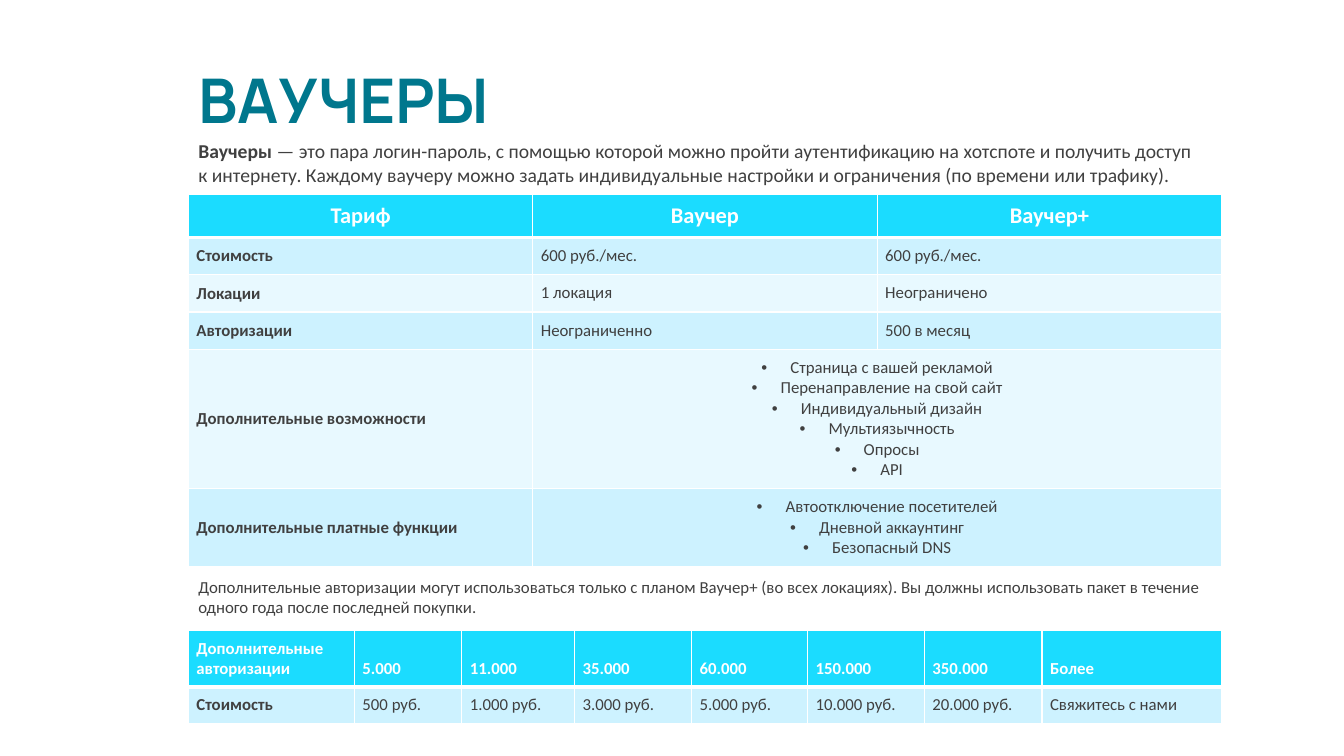
from lxml.etree import SubElement
from pptx import Presentation
from pptx.dml.color import RGBColor
from pptx.enum.text import MSO_ANCHOR, PP_ALIGN
from pptx.oxml.ns import qn
from pptx.util import Pt

COLORS = {
    "title": "00778D",
    "text": "404040",
    "header": "1BDCFF",
    "band_dark": "CDF2FF",
    "band_light": "E8F9FF",
    "white": "FFFFFF",
}
BODY_FONT = "Calibri"
CELL_INSET = 5.76
BULLET_INDENT = 18
LEFT, WIDTH = 134.6, 738

INTRO = [
    ("Ваучеры", True),
    (" — это пара логин-пароль, с помощью которой можно пройти аутентификацию "
     "на хотспоте и получить доступ к интернету. Каждому ваучеру можно задать "
     "индивидуальные настройки и ограничения (по времени или трафику).", False),
]
PACKAGE_NOTE = [
    ("Дополнительные авторизации могут использоваться только с планом Ваучер+ "
     "(во всех локациях). Вы должны использовать пакет в течение одного года "
     "после последней покупки.", False),
]
# A list in a cell becomes bullets spanning both plans
TARIFFS = [
    ["Тариф", "Ваучер", "Ваучер+"],
    ["Стоимость", "600 руб./мес.", "600 руб./мес."],
    ["Локации", "1 локация", "Неограничено"],
    ["Авторизации", "Неограниченно", "500 в месяц"],
    ["Дополнительные возможности",
     ["Страница с вашей рекламой", "Перенаправление на свой сайт",
      "Индивидуальный дизайн", "Мультиязычность", "Опросы", "API"]],
    ["Дополнительные платные функции",
     ["Автоотключение посетителей", "Дневной аккаунтинг", "Безопасный DNS"]],
]
TARIFF_HEIGHTS = [30.5, 26.6, 26.6, 26.6, 99.5, 56]
PACKAGES = [
    ["Дополнительные авторизации", "5.000", "11.000", "35.000", "60.000",
     "150.000", "350.000", "Более"],
    ["Стоимость", "500 руб.", "1.000 руб.", "3.000 руб.", "5.000 руб.",
     "10.000 руб.", "20.000 руб.", "Свяжитесь с нами"],
]
PACKAGE_WIDTHS = [118.6, 76.7, 80.6, 83.6, 82.8, 83.5, 84, 128.2]
PACKAGE_HEIGHTS = [40, 26.3]


def rgb(name):
    return RGBColor.from_string(COLORS[name])


def style(paragraph, size, color, bold=None, font=BODY_FONT):
    paragraph.font.name = font
    paragraph.font.size = Pt(size)
    paragraph.font.bold = bold
    paragraph.font.color.rgb = rgb(color)


def add_text(slide, box, runs, size, color="text", font=BODY_FONT,
             anchor=MSO_ANCHOR.TOP, line_spacing=None):
    frame = slide.shapes.add_textbox(*map(Pt, box)).text_frame
    frame.word_wrap = True
    frame.vertical_anchor = anchor
    paragraph = frame.paragraphs[0]
    paragraph.line_spacing = line_spacing
    for text, bold in runs:
        run = paragraph.add_run()
        run.text = text
        if len(runs) > 1:
            run.font.bold = bold
    style(paragraph, size, color, runs[0][1] if len(runs) == 1 else None, font)


def set_borders(cell, bottom):
    properties = cell._tc.get_or_add_tcPr()
    for position, (side, width) in enumerate(
            [("L", 1), ("R", 1), ("T", 1), ("B", bottom)]):
        line = SubElement(properties, qn(f"a:ln{side}"), w=str(Pt(width)))
        solid = SubElement(line, qn("a:solidFill"))
        SubElement(solid, qn("a:srgbClr"), val=COLORS["white"])
        properties.insert(position, line)


def add_bullet(paragraph):
    properties = paragraph._p.get_or_add_pPr()
    properties.set("marL", str(Pt(BULLET_INDENT)))
    properties.set("indent", str(-Pt(BULLET_INDENT)))
    SubElement(properties, qn("a:buFont"), typeface="Arial")
    SubElement(properties, qn("a:buChar"), char="•")


def fill_cell(cell, content, fill, color, size, bold, anchor, centered, bottom):
    cell.fill.solid()
    cell.fill.fore_color.rgb = rgb(fill)
    cell.margin_left = cell.margin_right = Pt(CELL_INSET)
    cell.margin_top = cell.margin_bottom = Pt(CELL_INSET)
    cell.vertical_anchor = anchor
    set_borders(cell, bottom)
    bulleted = isinstance(content, list)
    lines = [" " + item for item in content] if bulleted else [content]
    cell.text_frame.text = "\n".join(lines)
    for paragraph in cell.text_frame.paragraphs:
        if bulleted:
            add_bullet(paragraph)
        if bulleted or centered:
            paragraph.alignment = PP_ALIGN.CENTER
        style(paragraph, size, color, bold)


def add_grid(slide, left, top, widths, heights, rows, header_size,
             header_centered, label_anchor):
    table = slide.shapes.add_table(
        len(rows), len(widths), Pt(left), Pt(top),
        Pt(sum(widths)), Pt(sum(heights))).table
    for column, width in zip(table.columns, widths):
        column.width = Pt(width)
    for r, (row, height) in enumerate(zip(rows, heights)):
        table.rows[r].height = Pt(height)
        band = "band_dark" if r % 2 else "band_light"
        for c, content in enumerate(row):
            cell = table.cell(r, c)
            if isinstance(content, list):
                cell.merge(table.cell(r, len(widths) - 1))
            if r == 0:
                fill_cell(cell, content, "header", "white", header_size, True,
                          MSO_ANCHOR.BOTTOM, header_centered, 3)
            else:
                anchor = label_anchor if c == 0 else MSO_ANCHOR.TOP
                fill_cell(cell, content, band, "text", 12, c == 0,
                          anchor, False, 1)


def add_heading(slide, left, top, width):
    add_text(slide, (left, top, width, 58.3), [("ВАУЧЕРЫ", True)], 44, "title",
             "Manrope", MSO_ANCHOR.BOTTOM, 0.85)
    add_text(slide, (left, top + 53.3, width - 7, 58.3), INTRO, 14)


def add_tariffs(slide, left, top, width):
    add_grid(slide, left, top, [width / 3] * 3, TARIFF_HEIGHTS, TARIFFS,
             16, True, MSO_ANCHOR.MIDDLE)


def add_packages(slide, left, top, width):
    add_text(slide, (left, top, width, 53.3), PACKAGE_NOTE, 12)
    add_grid(slide, left, top + 42, PACKAGE_WIDTHS, PACKAGE_HEIGHTS, PACKAGES,
             12, False, MSO_ANCHOR.TOP)


def main():
    presentation = Presentation()
    presentation.slide_width, presentation.slide_height = Pt(960), Pt(540)
    slide = presentation.slides.add_slide(presentation.slide_layouts[6])
    add_heading(slide, LEFT, 42.5, WIDTH)
    add_tariffs(slide, LEFT, 139, WIDTH)
    add_packages(slide, LEFT, 408.2, WIDTH)
    presentation.save("out.pptx")


if __name__ == "__main__":
    main()
